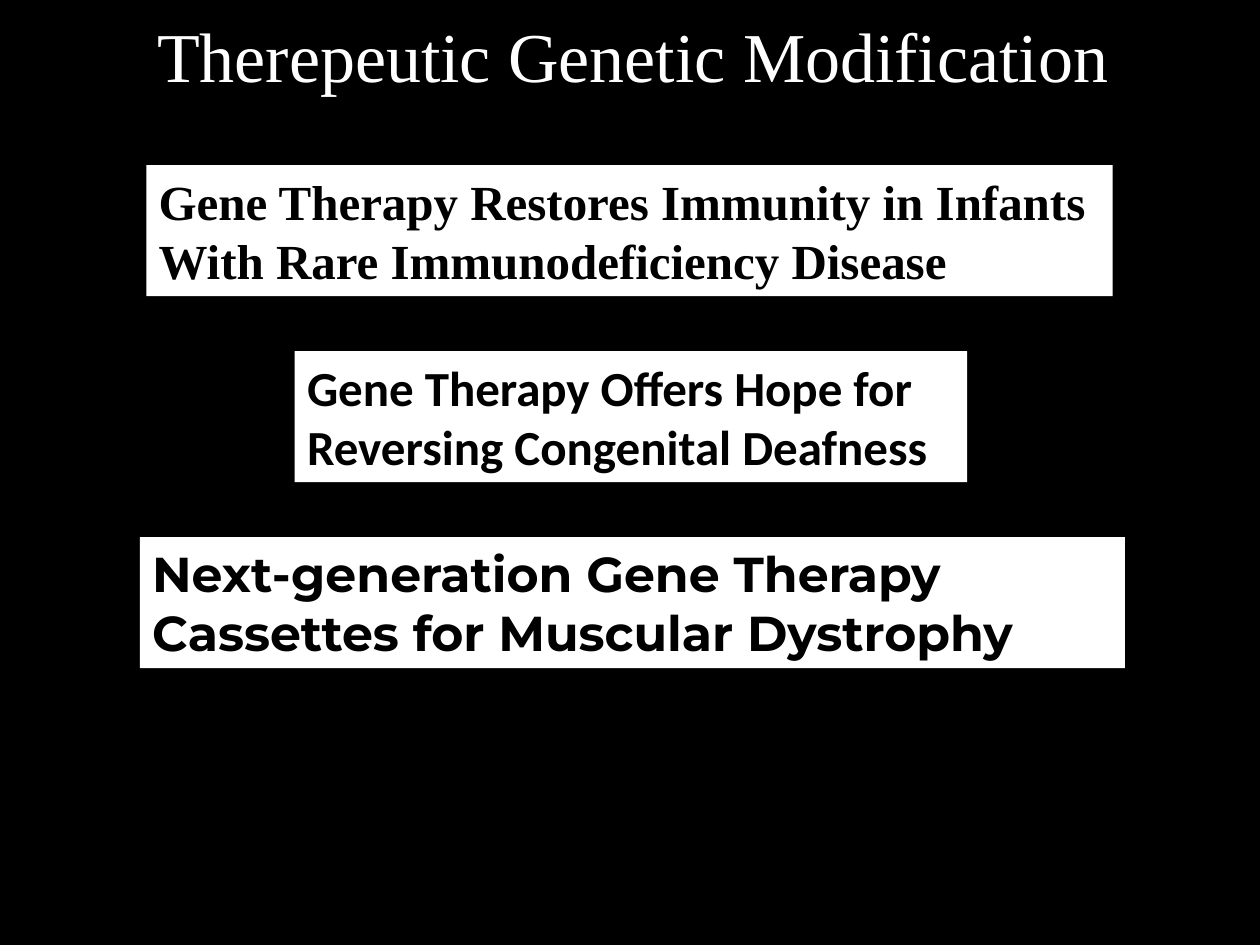
from pptx import Presentation
from pptx.dml.color import RGBColor
from pptx.enum.text import MSO_AUTO_SIZE, PP_ALIGN
from pptx.util import Cm, Pt

COLORS = {"background": "000000", "panel": "FFFFFF", "headline": "000000", "title": "FFFFFF"}


def add_text(slide, text, left, top, width, height, font_name, size, color, bold=False):
    box = slide.shapes.add_textbox(Cm(left), Cm(top), Cm(width), Cm(height))
    frame = box.text_frame
    frame.word_wrap = True
    frame.auto_size = MSO_AUTO_SIZE.SHAPE_TO_FIT_TEXT
    frame.text = text
    font = frame.paragraphs[0].runs[0].font
    font.name, font.size, font.bold = font_name, Pt(size), bold
    font.color.rgb = RGBColor.from_string(COLORS[color])
    return box


presentation = Presentation()
presentation.slide_width, presentation.slide_height = Cm(25.4), Cm(19.05)
slide = presentation.slides.add_slide(presentation.slide_layouts[6])

# Black background
background = slide.background.fill
background.solid()
background.fore_color.rgb = RGBColor.from_string(COLORS["background"])

# News headlines: text, left, width, font
headlines = [
    ("Gene Therapy Restores Immunity in Infants With Rare Immunodeficiency Disease",
     2.95, 19.48, "Times New Roman"),
    ("Gene Therapy Offers Hope for Reversing Congenital Deafness", 5.94, 13.56, "Calibri"),
    ("Next-generation Gene Therapy Cassettes for Muscular Dystrophy",
     2.82, 19.86, "Montserrat"),
]
first_top, step, panel_height = 3.33, 3.75, 2.64
for index, (headline, left, width, font_name) in enumerate(headlines):
    panel = add_text(slide, headline, left, first_top + index * step, width, panel_height,
                     font_name, 28, "headline", bold=True)
    panel.fill.solid()
    panel.fill.fore_color.rgb = RGBColor.from_string(COLORS["panel"])

# Title
title = add_text(slide, "Therepeutic Genetic Modification", 1.65, 0.13, 22.22, 1.96,
                 "Times New Roman", 40, "title")
title.text_frame.paragraphs[0].alignment = PP_ALIGN.CENTER

presentation.save("out.pptx")
